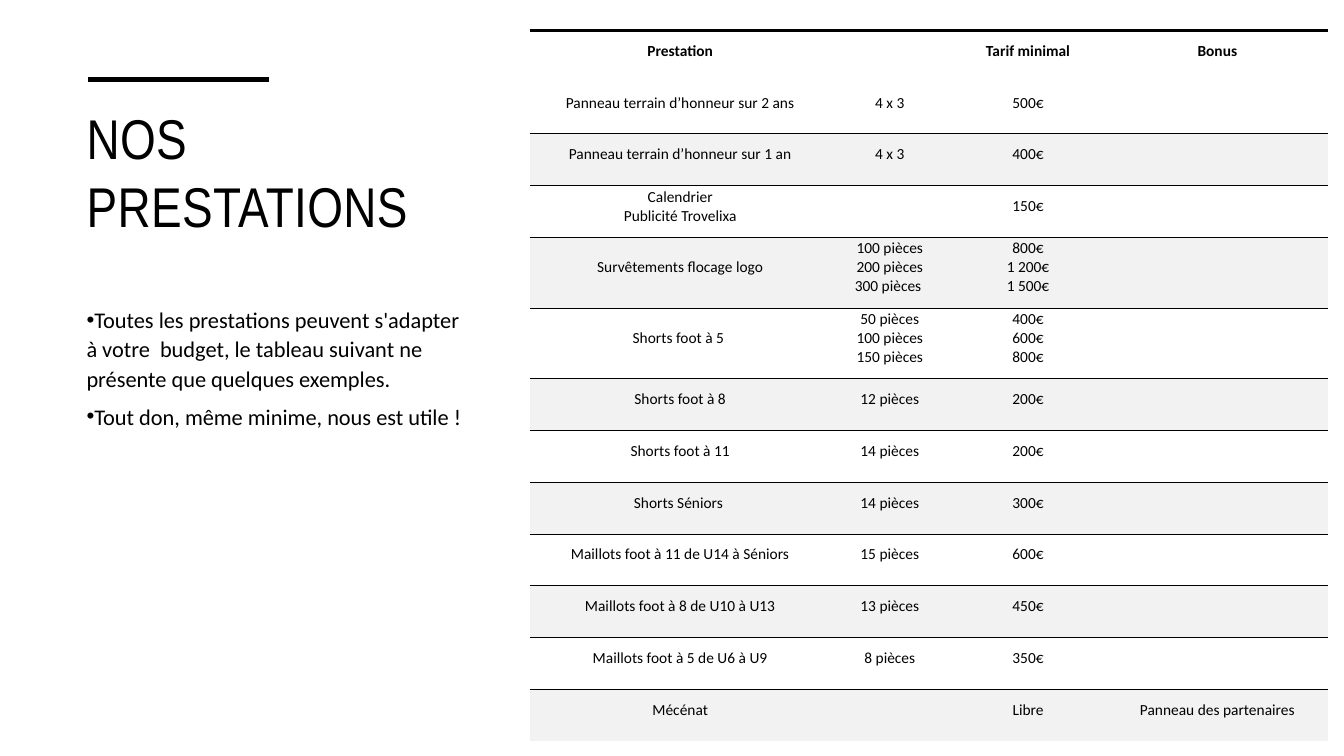
from lxml import etree
from pptx import Presentation
from pptx.dml.color import RGBColor
from pptx.enum.shapes import MSO_CONNECTOR
from pptx.enum.text import MSO_ANCHOR, MSO_AUTO_SIZE, PP_ALIGN
from pptx.oxml.ns import qn
from pptx.util import Pt

STRAIGHT = MSO_CONNECTOR.STRAIGHT
TOP, MIDDLE = MSO_ANCHOR.TOP, MSO_ANCHOR.MIDDLE
LEFT, CENTER = PP_ALIGN.LEFT, PP_ALIGN.CENTER
NO_AUTOFIT = MSO_AUTO_SIZE.NONE
BLACK, BAND = "000000", "F2F2F2"
PLAIN_TABLE_STYLE = "{2D5ABB26-0587-4C30-8999-92F81FD0307C}"

TITLE = "NOS PRESTATIONS"
NOTES = [
    "Toutes les prestations peuvent s'adapter à votre  budget, le tableau suivant ne présente que quelques exemples.",
    "Tout don, même minime, nous est utile !",
]
# Each line break inside a cell starts a new paragraph.
SERVICES = [
    ("Prestation", "", "Tarif minimal", "Bonus"),
    ("Panneau terrain d’honneur sur 2 ans", "4 x 3", "500€", ""),
    ("Panneau terrain d’honneur sur 1 an", "4 x 3", "400€", ""),
    ("Calendrier\nPublicité Trovelixa", "", "150€", ""),
    ("Survêtements flocage logo", "100 pièces\n200 pièces\n300 pièces ", "800€\n1 200€\n1 500€", ""),
    ("Shorts foot à 5 ", "50 pièces\n100 pièces\n150 pièces", "400€\n600€\n800€", ""),
    ("Shorts foot à 8", "12 pièces", "200€", ""),
    ("Shorts foot à 11", "14 pièces", "200€", ""),
    ("Shorts Séniors ", "14 pièces", "300€", ""),
    ("Maillots foot à 11 de U14 à Séniors", "15 pièces", "600€", ""),
    ("Maillots foot à 8 de U10 à U13", "13 pièces", "450€", ""),
    ("Maillots foot à 5 de U6 à U9", "8 pièces", "350€", ""),
    ("Mécénat", "", "Libre", "Panneau des partenaires"),
]
COLUMN_WIDTHS = [218, 81.5, 116, 154.5]
ROW_HEIGHT, TALL_ROW_HEIGHT = 36.95, 50.6


def color(value):
    return RGBColor.from_string(value)


def add_run(paragraph, text, size, font="Calibri", bold=False):
    run = paragraph.add_run()
    run.text = text
    run.font.size = Pt(size)
    run.font.name = font
    run.font.bold = bold
    run.font.color.rgb = color(BLACK)
    return run


def add_top_border(cell, width):
    properties = cell._tc.get_or_add_tcPr()
    border = etree.Element(qn("a:lnT"), w=str(Pt(width)))
    fill = etree.SubElement(border, qn("a:solidFill"))
    etree.SubElement(fill, qn("a:srgbClr"), val=BLACK)
    properties.insert(0, border)


def add_title(slide):
    title = slide.shapes.title
    title.left, title.top, title.width, title.height = Pt(54.7), Pt(70.6), Pt(286.6), Pt(123.8)
    frame = title.text_frame
    frame.word_wrap = True
    frame.auto_size = NO_AUTOFIT
    frame.vertical_anchor = TOP
    paragraph = frame.paragraphs[0]
    paragraph.alignment = LEFT
    run = add_run(paragraph, TITLE, 40, "Arial Narrow")
    run.font._element.set("spc", "30")

    rule = slide.shapes.add_connector(STRAIGHT, Pt(63.2), Pt(56.7), Pt(192.2), Pt(56.7))
    rule.line.color.rgb = color(BLACK)
    rule.line.width = Pt(3.5)
    etree.SubElement(rule._element.spPr, qn("a:effectLst"))


def add_notes_box(slide):
    frame = slide.shapes.add_textbox(Pt(54.7), Pt(213.1), Pt(282.2), Pt(275.8)).text_frame
    frame.word_wrap = True
    for index, note in enumerate(NOTES):
        paragraph = frame.add_paragraph() if index else frame.paragraphs[0]
        paragraph.line_spacing = 1.1
        paragraph.space_after = Pt(6)
        properties = paragraph._p.get_or_add_pPr()
        properties.set("marL", "0")
        properties.set("indent", str(-Pt(18)))
        etree.SubElement(properties, qn("a:buFont"), typeface="Arial")
        etree.SubElement(properties, qn("a:buChar"), char="•")
        add_run(paragraph, note, 16)


def fill_cell(cell, text, row_index):
    cell.margin_left, cell.margin_top = Pt(0), Pt(1.4)
    cell.margin_right, cell.margin_bottom = Pt(2.9), Pt(8.6)
    cell.vertical_anchor = MIDDLE
    banded = row_index > 0 and row_index % 2 == 0
    if banded:
        cell.fill.solid()
        cell.fill.fore_color.rgb = color(BAND)
        add_top_border(cell, 0.5)
    else:
        cell.fill.background()
    if row_index == 0:
        add_top_border(cell, 2.25)
    if not text:
        return
    for index, line in enumerate(text.split("\n")):
        paragraph = cell.text_frame.add_paragraph() if index else cell.text_frame.paragraphs[0]
        paragraph.alignment = CENTER
        add_run(paragraph, line, 11, bold=row_index == 0)


def add_services_table(slide):
    heights = [TALL_ROW_HEIGHT if row[1].count("\n") == 2 else ROW_HEIGHT for row in SERVICES]
    table = slide.shapes.add_table(
        len(SERVICES), len(COLUMN_WIDTHS), Pt(378.3), Pt(21.6),
        Pt(sum(COLUMN_WIDTHS)), Pt(sum(heights))).table
    table.first_row = table.horz_banding = False
    table._tbl.tblPr.find(qn("a:tableStyleId")).text = PLAIN_TABLE_STYLE
    for column, width in zip(table.columns, COLUMN_WIDTHS):
        column.width = Pt(width)
    for row_index, texts in enumerate(SERVICES):
        table.rows[row_index].height = Pt(heights[row_index])
        for column_index, text in enumerate(texts):
            fill_cell(table.cell(row_index, column_index), text, row_index)


def main():
    presentation = Presentation()
    presentation.slide_width, presentation.slide_height = Pt(960), Pt(540)
    slide = presentation.slides.add_slide(presentation.slide_layouts[5])
    add_title(slide)
    add_notes_box(slide)
    add_services_table(slide)
    presentation.save("out.pptx")


if __name__ == "__main__":
    main()
